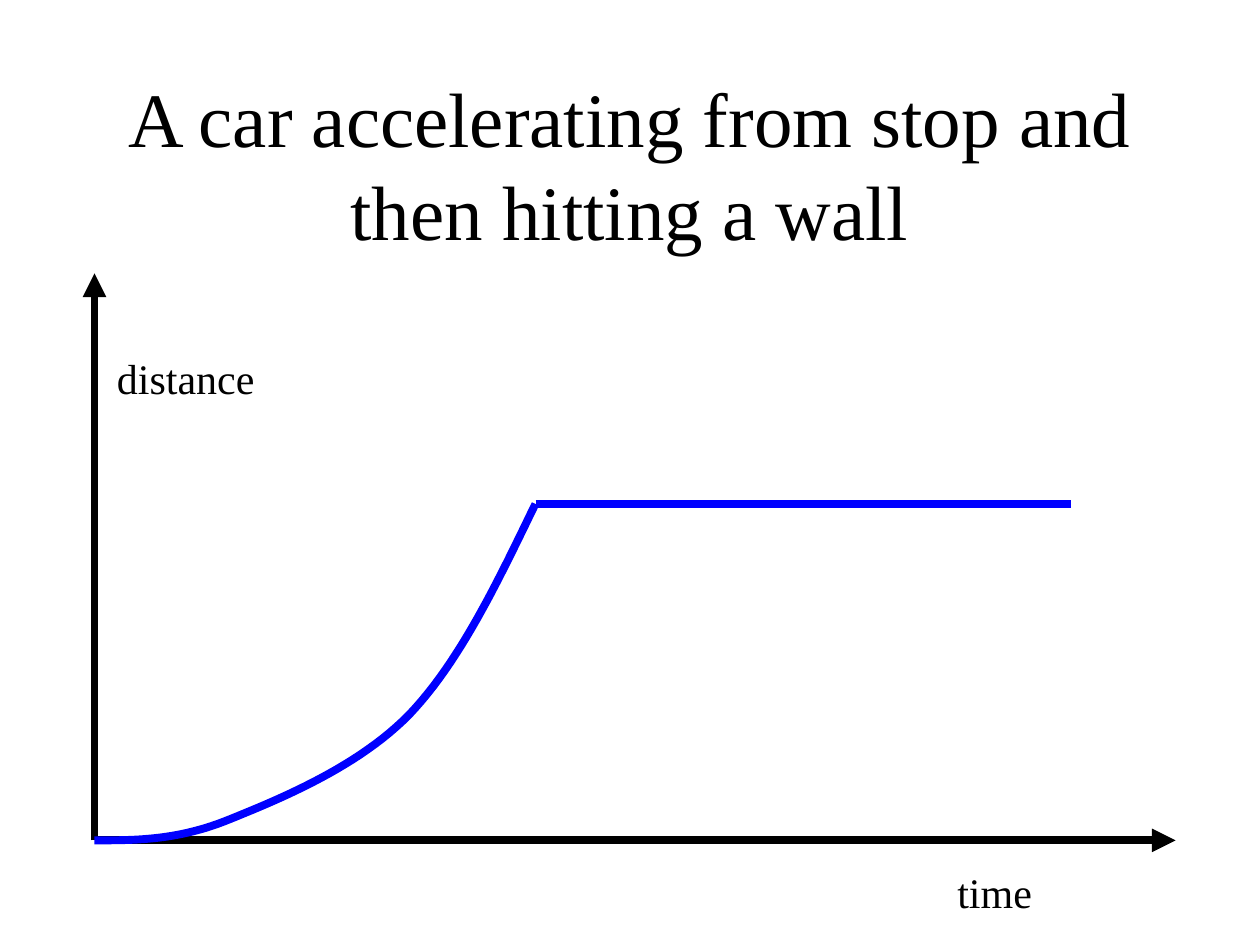
import pptx
import pptx.dml.color
import pptx.enum.shapes
import pptx.enum.text
import pptx.oxml
import pptx.oxml.ns
import pptx.util
from pptx.util import Inches

BLACK = pptx.dml.color.RGBColor(0, 0, 0)
BLUE = pptx.dml.color.RGBColor(0, 0, 255)
ALIGN = pptx.enum.text.PP_ALIGN
ANCHOR = pptx.enum.text.MSO_ANCHOR
STEPS = 24


def bezier(start, ends):
    """Return points along a chain of cubic curves, each (control, control, end)."""
    points = [start]
    for b, c, d in ends:
        a = points[-1]
        for step in range(1, STEPS + 1):
            t = step / STEPS
            u = 1 - t
            points.append(tuple(
                u**3 * p + 3 * u**2 * t * q + 3 * u * t**2 * r + t**3 * s
                for p, q, r, s in zip(a, b, c, d)))
    return points


class Board:
    font = "Times New Roman"
    width = pptx.util.Pt(4.5)

    def __init__(self, slide):
        self.shapes = slide.shapes

    def text(self, words, left, top, width, height, size=24,
             align=ALIGN.LEFT, anchor=ANCHOR.TOP):
        box = self.shapes.add_textbox(*map(Inches, (left, top, width, height)))
        frame = box.text_frame
        frame.word_wrap = True
        frame.vertical_anchor = anchor
        para = frame.paragraphs[0]
        para.text = words
        para.alignment = align
        para.font.name = self.font
        para.font.size = pptx.util.Pt(size)
        para.font.color.rgb = BLACK

    def stroke(self, shape, color):
        shape.line.color.rgb = color
        shape.line.width = self.width

    def line(self, start, end, color, arrow=False):
        link = self.shapes.add_connector(
            pptx.enum.shapes.MSO_CONNECTOR.STRAIGHT, *map(Inches, start + end))
        self.stroke(link, color)
        props = link.element.spPr
        if arrow:
            tip = pptx.oxml.parse_xml(
                f'<a:tailEnd {pptx.oxml.ns.nsdecls("a")} type="triangle"/>')
            props.find(pptx.oxml.ns.qn("a:ln")).append(tip)
        props.append(pptx.oxml.parse_xml(
            f'<a:effectLst {pptx.oxml.ns.nsdecls("a")}/>'))

    def curve(self, points, color):
        points = [tuple(map(Inches, point)) for point in points]
        pen = self.shapes.build_freeform(*points[0])
        pen.add_line_segments(points[1:], close=False)
        shape = pen.convert_to_shape()
        shape.shadow.inherit = False
        shape.fill.background()
        self.stroke(shape, color)


def main():
    deck = pptx.Presentation()
    deck.slide_width, deck.slide_height = Inches(10), Inches(7.5)
    board = Board(deck.slides.add_slide(deck.slide_layouts[6]))

    board.text("A car accelerating from stop and then hitting a wall",
               0.75, 0.67, 8.5, 1.25, 44, ALIGN.CENTER, ANCHOR.MIDDLE)

    origin, crash = (0.75, 6.67), (4.25, 4)
    board.line(origin, (0.75, 2.17), BLACK, arrow=True)
    board.line(origin, (9.33, 6.67), BLACK, arrow=True)
    board.text("distance", 0.83, 2.75, 1.67, 0.5)
    board.text("time", 7.5, 6.83, 1.5, 0.5)

    board.curve(bezier(origin, [
        ((1.08, 6.67), (1.42, 6.67), (1.83, 6.5)),
        ((2.25, 6.33), (2.85, 6.08), (3.25, 5.67)),
        ((3.65, 5.25), (3.95, 4.62), crash),
    ]), BLUE)
    board.line(crash, (8.5, 4), BLUE)

    deck.save("out.pptx")


if __name__ == "__main__":
    main()
